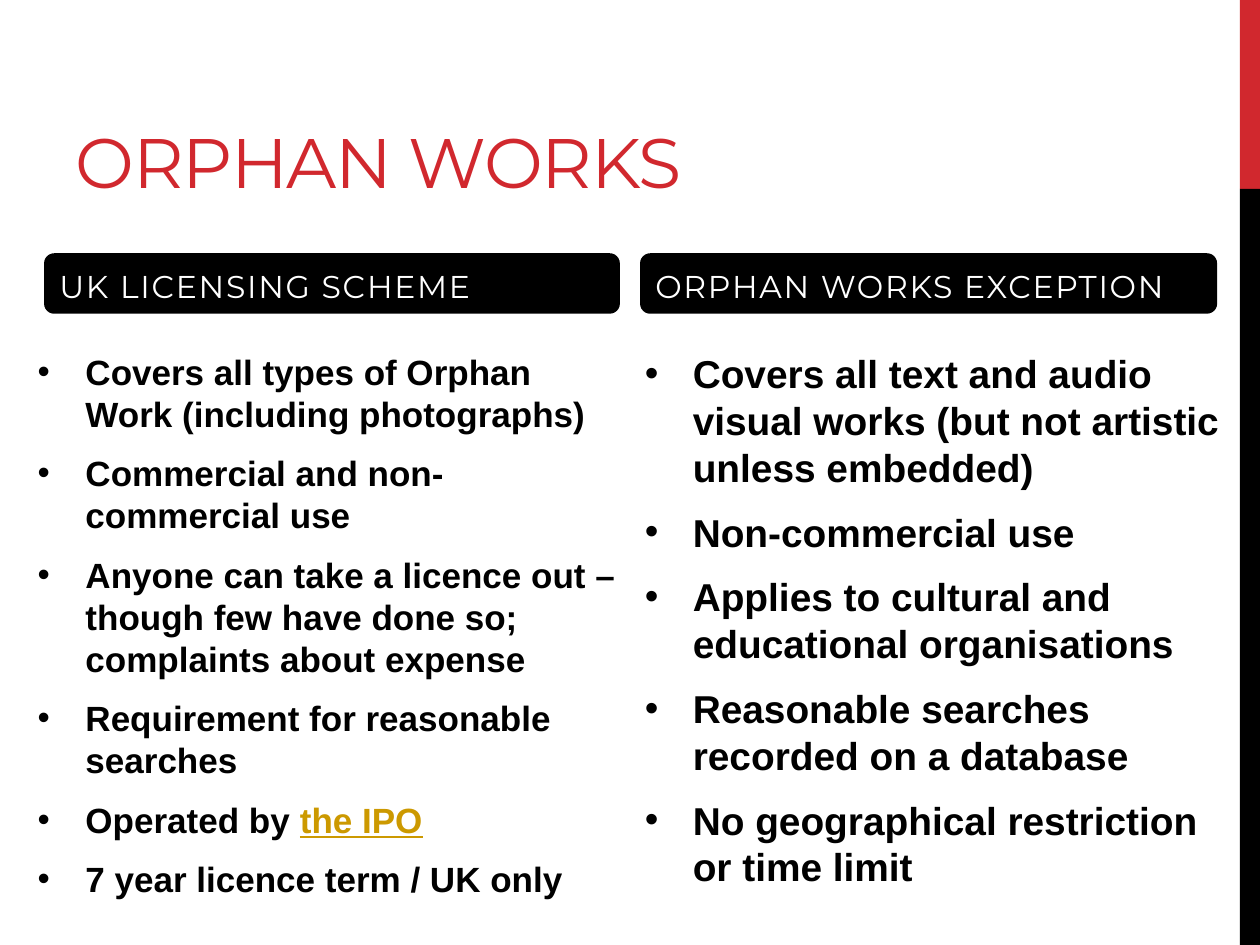
from pptx import Presentation
from pptx import util as u
from pptx.dml.color import RGBColor
from pptx.enum import shapes, text
from pptx.oxml.ns import qn
from lxml import etree

RED, BLACK, WHITE, GOLD = "D1282E", "000000", "FFFFFF", "CC9900"

LICENSING = [
    ["Covers all types of Orphan Work (including photographs)"],
    ["Commercial and non-commercial use"],
    ["Anyone can take a licence out – though few have done so; complaints about expense"],
    ["Requirement for reasonable searches"],
    ["Operated by ", "the IPO"],
    ["7 year licence term / UK only"],
]
EXCEPTION = [
    ["Covers all text and audio visual works (but not artistic unless embedded)"],
    ["Non-commercial use"],
    ["Applies to cultural and educational organisations"],
    ["Reasonable searches recorded on a database"],
    ["No geographical restriction or time limit"],
]


def color(value):
    return RGBColor.from_string(value)


def inches(box):
    return [u.Inches(length) for length in box]


def style(span, name, size, value, spacing=0):
    span.font.name = name
    span.font.size = u.Pt(size)
    span.font.color.rgb = color(value)
    if spacing:
        span._r.get_or_add_rPr().set("spc", str(round(spacing * 100)))


def add_block(page, kind, box, fill):
    block = page.shapes.add_shape(kind, *inches(box))
    block.shadow.inherit = False
    block.fill.solid()
    block.fill.fore_color.rgb = color(fill)
    block.line.fill.background()
    return block


def add_text(page, box):
    frame = page.shapes.add_textbox(*inches(box)).text_frame
    frame.word_wrap = True
    return frame


def add_side_bar(page, left, top, width, height):
    split = height / 5
    add_block(page, shapes.MSO_SHAPE.RECTANGLE, (left, top, width, split), RED)
    add_block(page, shapes.MSO_SHAPE.RECTANGLE,
              (left, top + split, width, height - split), BLACK)


def add_title(page, box, words):
    frame = add_text(page, box)
    frame.vertical_anchor = text.MSO_ANCHOR.BOTTOM
    frame.text = words
    style(frame.paragraphs[0].runs[0], "Montserrat", 40, RED, -0.6)


def add_heading(page, box, words):
    pill = add_block(page, shapes.MSO_SHAPE.ROUNDED_RECTANGLE, box, BLACK)
    frame = pill.text_frame
    frame.vertical_anchor = text.MSO_ANCHOR.BOTTOM
    frame.text = words
    para = frame.paragraphs[0]
    para.alignment = text.PP_ALIGN.LEFT
    para.space_before = u.Pt(3.6)
    para.space_after = u.Pt(6)
    style(para.runs[0], "Montserrat", 18, WHITE, 1)


def add_bullet(para):
    properties = para._p.get_or_add_pPr()
    indent = u.Inches(0.38)
    properties.set("marL", str(indent))
    properties.set("indent", str(-indent))
    etree.SubElement(properties, qn("a:buFont"), typeface="Arial")
    etree.SubElement(properties, qn("a:buChar"), char="•")


def add_bullets(page, box, items, size):
    frame = add_text(page, box)
    for index, parts in enumerate(items):
        para = frame.add_paragraph() if index else frame.paragraphs[0]
        para.space_before = u.Pt(size / 5)
        para.space_after = u.Pt(6)
        add_bullet(para)
        for position, part in enumerate(parts):
            span = para.add_run()
            span.text = part
            style(span, "Arial", size, GOLD if position else BLACK)
            span.font.bold = True
            if position:
                span.font.underline = True


def main():
    deck = Presentation()
    deck.slide_width, deck.slide_height = u.Inches(10), u.Inches(7.5)
    page = deck.slides.add_slide(deck.slide_layouts[6])
    add_side_bar(page, 9.84, 0, 0.16, 7.5)
    add_title(page, (0.5, 0.16, 6.78, 1.5), "ORPHAN WORKS")
    add_heading(page, (0.35, 2.01, 4.57, 0.48), "UK LICENSING SCHEME")
    add_bullets(page, (0.2, 2.73, 4.82, 4.33), LICENSING, 20)
    add_heading(page, (5.08, 2.01, 4.58, 0.48), "ORPHAN WORKS EXCEPTION")
    add_bullets(page, (5.02, 2.73, 4.78, 4.2), EXCEPTION, 22.2)
    deck.save("out.pptx")


if __name__ == "__main__":
    main()
